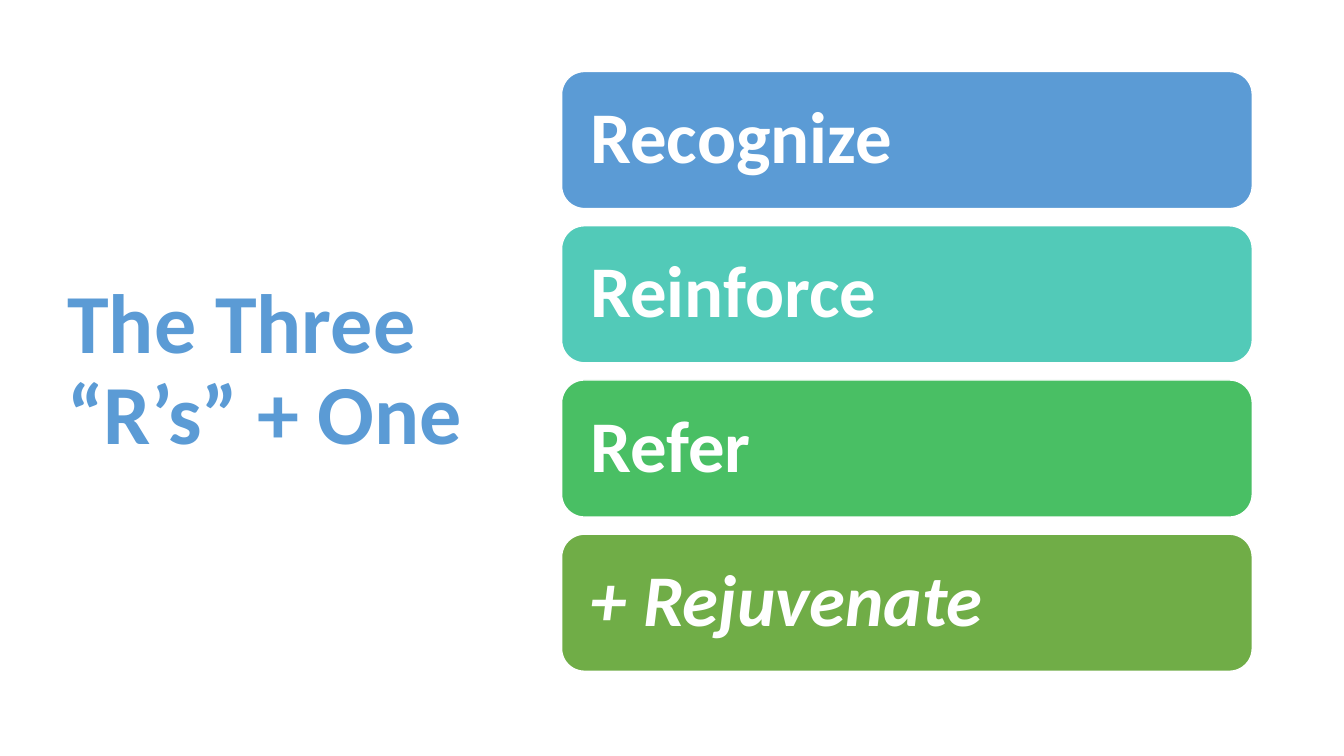
import pptx
import pptx.dml.color
import pptx.enum.shapes
import pptx.enum.text
import pptx.util
from pptx.util import Inches

COLORS = {
    "blue": "5B9BD5",
    "teal": "52CAB8",
    "green": "49BF64",
    "olive": "70AD47",
    "white": "FFFFFF",
}
FONT = "Calibri"
CARDS = [
    ("Recognize", "blue", False),
    ("Reinforce", "teal", False),
    ("Refer", "green", False),
    ("+ Rejuvenate", "olive", True),
]
CARD_LEFT, CARD_TOP = 5.57, 0.71
CARD_WIDTH, CARD_HEIGHT = 6.85, 1.36
CARD_STEP = 1.53


def rgb(name):
    return pptx.dml.color.RGBColor.from_string(COLORS[name])


def write_text(shape, text, size, color, inset, italic=False):
    """Fill a shape with one bold, left-aligned, vertically centred paragraph."""
    frame = shape.text_frame
    frame.word_wrap = True
    frame.vertical_anchor = pptx.enum.text.MSO_ANCHOR.MIDDLE
    frame.margin_left = frame.margin_right = Inches(inset)
    paragraph = frame.paragraphs[0]
    paragraph.text = text
    paragraph.alignment = pptx.enum.text.PP_ALIGN.LEFT
    paragraph.line_spacing = 0.9
    font = paragraph.font
    font.name = FONT
    font.size = pptx.util.Pt(size)
    font.bold = True
    font.italic = italic
    font.color.rgb = rgb(color)


def add_title(slide, text):
    box = slide.shapes.add_textbox(
        Inches(0.57), Inches(0.68), Inches(4.16), Inches(6.02))
    write_text(box, text, 60, "blue", inset=0.1)


def add_card(slide, top, text, color, italic):
    card = slide.shapes.add_shape(
        pptx.enum.shapes.MSO_SHAPE.ROUNDED_RECTANGLE,
        Inches(CARD_LEFT), Inches(top), Inches(CARD_WIDTH), Inches(CARD_HEIGHT))
    card.shadow.inherit = False
    card.fill.solid()
    card.fill.fore_color.rgb = rgb(color)
    card.line.color.rgb = rgb("white")
    card.line.width = pptx.util.Pt(1)
    write_text(card, text, 52, "white", inset=0.22, italic=italic)


def main():
    presentation = pptx.Presentation()
    presentation.slide_width = Inches(13.33)
    presentation.slide_height = Inches(7.5)
    slide = presentation.slides.add_slide(presentation.slide_layouts[6])

    # Title on the left
    add_title(slide, "The Three “R’s” + One")

    # Stack of cards on the right
    for index, (text, color, italic) in enumerate(CARDS):
        add_card(slide, CARD_TOP + index * CARD_STEP, text, color, italic)

    presentation.save("out.pptx")


if __name__ == "__main__":
    main()
